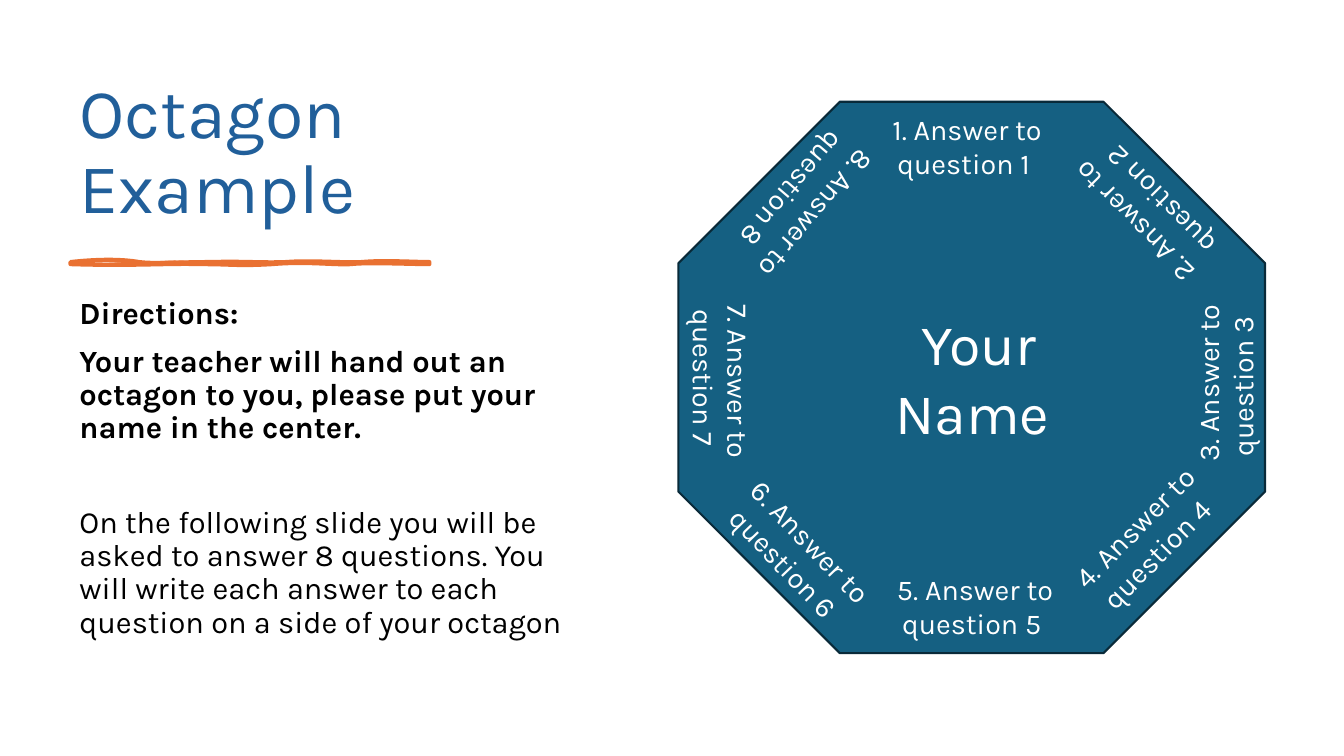
from lxml import etree
from pptx import Presentation
from pptx.dml.color import RGBColor
from pptx.enum.shapes import MSO_SHAPE
from pptx.enum.text import MSO_ANCHOR, MSO_AUTO_SIZE, PP_ALIGN
from pptx.oxml.ns import qn
from pptx.util import Pt

PX = 9144  # 100 px to the inch
FONT = "Karla"
BLUE = RGBColor(0x21, 0x5F, 0x9A)
TEAL = RGBColor(0x15, 0x60, 0x82)
NAVY = RGBColor(0x09, 0x2A, 0x39)
ORANGE = RGBColor(0xE9, 0x71, 0x32)
BLACK = RGBColor(0, 0, 0)
WHITE = RGBColor(255, 255, 255)
OCTAGON = MSO_SHAPE.OCTAGON
BOTTOM = MSO_ANCHOR.BOTTOM
CENTER = PP_ALIGN.CENTER
GROW = MSO_AUTO_SIZE.SHAPE_TO_FIT_TEXT

# Text, bold, space before in points (the last one leaves a line free)
BODY = [
    ("Directions:", True, 0),
    ("Your teacher will hand out an octagon to you, please put your "
     "name in the center.", True, 10),
    ("On the following slide you will be asked to answer 8 questions. "
     "You will write each answer to each question on a side of your "
     "octagon", False, 44),
]

# Number, left and top inside the octagon's box, turn
SIDES = [
    (1, 160, 5, 0), (3, 424, 235, 270), (4, 345, 393, 314.5),
    (7, -85, 233, 90), (6, -7, 407, 46.1), (5, 168, 461, 0),
    (2, 344, 61, 225.1), (8, -2, 54, 130.5),
]

# Bezier points of the brush stroke: a start, then three for each curve
EDGE = [
    (0, 0), (27, -3), (51, -3), (68, 0), (85, 2), (107, 0), (139, 0),
    (171, -1), (190, 1), (214, 0), (238, -2), (269, 1), (289, 0),
    (309, -2), (342, 0), (356, 0), (356, 0), (356, 1), (356, 2),
    (338, 2), (294, 0), (278, 2), (262, 3), (234, -1), (200, 2),
    (165, 4), (161, 2), (129, 2), (96, 1), (62, 4), (0, 2),
    (0, 1), (0, 0), (0, 0),
]
CORE = [
    (0, 0), (32, 2), (40, 0), (68, 0), (96, -1), (99, -3), (129, 0),
    (158, 2), (191, 1), (207, 0), (223, -2), (257, 2), (274, 0),
    (292, -3), (327, 3), (356, 0), (356, 0), (356, 1), (356, 2),
    (342, 1), (302, 4), (285, 2), (268, -1), (239, 2), (207, 2),
    (174, 1), (170, 0), (146, 2), (123, 3), (109, 1), (75, 2),
    (41, 2), (22, 1), (0, 2), (0, 1), (0, 0), (0, 0),
]


def add_text(shapes, left, top, width, height):
    box = shapes.add_textbox(left * PX, top * PX, width * PX, height * PX)
    box.text_frame.word_wrap = True
    return box


def add_run(para, text, size, color, bold=False):
    run = para.add_run()
    run.text = text
    font = run.font
    font.name, font.size, font.bold = FONT, Pt(size), bold
    font.color.rgb = color


def add_label(shapes, left, top, width, height, text, size, turn=0):
    """White centered text."""
    box = add_text(shapes, left, top, width, height)
    box.rotation = turn
    box.text_frame.auto_size = GROW
    para = box.text_frame.paragraphs[0]
    para.alignment = CENTER
    para.space_after = Pt(6)
    add_run(para, text, size, WHITE)


def add_curve(paths, knots, width, height, **paint):
    """Append a closed path of cubic curves."""
    curve = etree.SubElement(paths, qn("a:path"), w=str(width * PX),
                             h=str(height * PX), **paint)
    spans = [knots[:1]]
    spans += [knots[i:i + 3] for i in range(1, len(knots), 3)]
    for i, span in enumerate(spans):
        part = etree.SubElement(
            curve, qn("a:cubicBezTo" if i else "a:moveTo"))
        for x, y in span:
            etree.SubElement(part, qn("a:pt"),
                             x=str(x * PX), y=str(y * PX))
    etree.SubElement(curve, qn("a:close"))


def add_stroke(shapes, left, top, width, height):
    right, base = left + width, top + height
    build = shapes.build_freeform(left, top, scale=PX)
    build.add_line_segments([(right, top), (right, base), (left, base)])
    shape = build.convert_to_shape()
    paths = next(shape.element.iter(qn("a:pathLst")))
    paths.remove(paths[0])
    add_curve(paths, EDGE, width, height, fill="none")
    add_curve(paths, CORE, width, height, stroke="0")
    shape.shadow.inherit = False
    shape.fill.solid()
    shape.fill.fore_color.rgb = ORANGE
    shape.line.color.rgb = ORANGE
    shape.line.width = Pt(3)


def add_guide(shapes, left, top, width):
    """Title, brush stroke and directions, one below the other."""
    frame = add_text(shapes, left, top, width, 162).text_frame
    frame.vertical_anchor = BOTTOM
    para = frame.paragraphs[0]
    para.line_spacing = 0.9
    add_run(para, "Octagon Example", 50, BLUE)

    add_stroke(shapes, left + 1, top + 190, 356, 2)

    frame = add_text(shapes, left, top + 221, width, 388).text_frame
    for i, (text, bold, space) in enumerate(BODY):
        para = frame.add_paragraph() if i else frame.paragraphs[0]
        para.line_spacing = 0.9
        para.space_before = Pt(space)
        add_run(para, text, 22, BLACK, bold)


def add_octagon(shapes, left, top, width, height):
    shape = shapes.add_shape(
        OCTAGON, left * PX, top * PX, width * PX, height * PX)
    shape.shadow.inherit = False
    shape.fill.solid()
    shape.fill.fore_color.rgb = TEAL
    shape.line.color.rgb = NAVY
    shape.line.width = Pt(1.5)
    for num, x, y, turn in SIDES:
        size = (246, 88) if turn else (253, 85)
        add_label(shapes, left + x, top + y, *size,
                  f"{num}. Answer to question {num} ", 20.5, turn)
    add_label(shapes, left + 187, top + 200, 223, 158, "Your Name ", 41)


def main():
    deck = Presentation()
    deck.slide_height = 750 * PX
    deck.slide_width = deck.slide_height * 16 // 9
    slide = deck.slides.add_slide(deck.slide_layouts[6])
    add_guide(slide.shapes, 69, 70, 527)
    group = slide.shapes.add_group_shape()
    add_octagon(group.shapes, 673, 101, 582, 547)
    deck.save("out.pptx")


if __name__ == "__main__":
    main()
